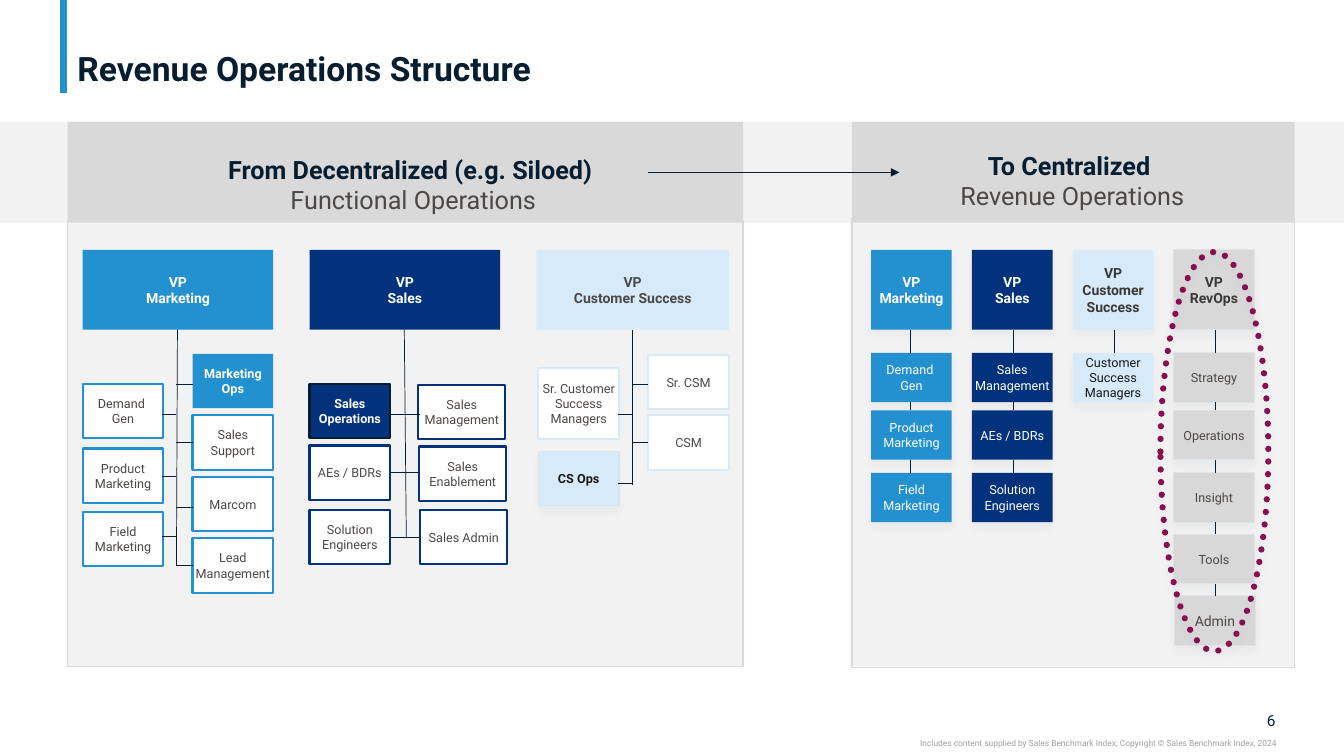
from dataclasses import dataclass, replace
from itertools import pairwise
from typing import Any, Optional, Sequence

from pptx import Presentation
from pptx import util as u
from pptx.dml.color import RGBColor
from pptx.enum import dml, shapes, text
from pptx.oxml import parse_xml
from pptx.oxml.ns import nsdecls, qn

PX = 9144  # EMU in one px, 100 px to the inch
FONT = "Roboto"
NAVY, BLUE, DEEP, PALE = "071E31", "2391CF", "03327C", "D7EAF9"
WHITE, GRAY, BAND, EDGE, SLATE = "FFFFFF", "D8D8D8", "D9D9D9", "E0E3E6", "4C4846"
MID, TOP = text.MSO_ANCHOR.MIDDLE, text.MSO_ANCHOR.TOP
LEFT, MIDST, RIGHT = text.PP_ALIGN.LEFT, text.PP_ALIGN.CENTER, text.PP_ALIGN.RIGHT


@dataclass(frozen=True)
class Look:
    fill: Optional[str] = None
    edge: Optional[str] = None
    width: float = 1.5
    ink: str = SLATE
    bold: bool = False
    size: float = 9
    shade: bool = False


@dataclass(frozen=True)
class Line:
    words: str
    ink: str
    bold: bool = False
    size: float = 9


@dataclass(frozen=True)
class Box:
    x: int
    y: int
    w: int
    h: int
    words: str = ""
    look: Look = Look()


@dataclass(frozen=True)
class Tie:
    x1: int
    y1: int
    x2: int
    y2: int
    ink: str = NAVY
    width: float = 0.5


@dataclass(frozen=True)
class Team:
    """A column of the centralized chart, its head first."""
    x: int
    stem: int
    head: Look
    staff: Look
    words: tuple[str, ...]


def color(code: str) -> RGBColor:
    return RGBColor.from_string(code)


def assign(item: Any, **vals: Any) -> None:
    for key, val in vals.items():
        setattr(item, key, val)


def write(frame: Any, lines: Sequence[Line], align: Any = MIDST,
          anchor: Any = MID, inset: tuple[int, int] = (0, 0), lead: float = 1.0) -> None:
    side, end = (n * PX for n in inset)
    assign(frame, word_wrap=True, vertical_anchor=anchor, margin_left=side,
           margin_right=side, margin_top=end, margin_bottom=end)
    for i, line in enumerate(lines):
        par = frame.add_paragraph() if i else frame.paragraphs[0]
        assign(par, alignment=align, line_spacing=lead)
        run = par.add_run()
        run.text = line.words
        assign(run.font, name=FONT, size=u.Pt(line.size), bold=line.bold)
        run.font.color.rgb = color(line.ink)


def label(tree: Any, box: Box, lines: Sequence[Line], **form: Any) -> None:
    area = tree.add_textbox(*(n * PX for n in (box.x, box.y, box.w, box.h)))
    write(area.text_frame, lines, **form)


def draw(tree: Any, box: Box, kind: Any = shapes.MSO_SHAPE.RECTANGLE) -> Any:
    look = box.look
    item = tree.add_shape(kind, *(n * PX for n in (box.x, box.y, box.w, box.h)))
    item.shadow.inherit = False
    if look.fill:
        item.fill.solid()
        item.fill.fore_color.rgb = color(look.fill)
    else:
        item.fill.background()
    if look.edge:
        item.line.color.rgb = color(look.edge)
        item.line.width = u.Pt(look.width)
    else:
        item.line.fill.background()
    if look.shade:
        item._element.spPr.find(qn("a:effectLst")).append(parse_xml(
            f'<a:outerShdw {nsdecls("a")} blurRad="{u.Pt(6)}" dist="{u.Pt(4)}" '
            f'dir="5400000" algn="t" rotWithShape="0"><a:srgbClr val="{NAVY}">'
            '<a:alpha val="4000"/></a:srgbClr></a:outerShdw>'))
    if box.words:
        write(item.text_frame, [Line(words, look.ink, look.bold, look.size)
                                for words in box.words.split("\n")])
    return item


def link(tree: Any, tie: Tie, arrow: bool = False) -> None:
    item = tree.add_connector(shapes.MSO_CONNECTOR.STRAIGHT,
                              *(n * PX for n in (tie.x1, tie.y1, tie.x2, tie.y2)))
    item.line.color.rgb = color(tie.ink)
    item.line.width = u.Pt(tie.width)
    prop = item._element.spPr
    if arrow:
        prop.find(qn("a:ln")).append(parse_xml(f'<a:tailEnd {nsdecls("a")} type="triangle"/>'))
    prop.append(parse_xml(f'<a:effectLst {nsdecls("a")}/>'))


PANEL, HEAD, FRAME = Look("F2F2F2"), Look(BAND), Look(edge=BAND, width=1)
BACKS = [Box(0, 121, 1333, 100, look=PANEL), Box(844, 121, 439, 540, look=PANEL),
         Box(67, 121, 671, 540, look=PANEL), Box(845, 121, 439, 100, look=HEAD),
         Box(67, 121, 670, 100, look=HEAD)]
FRAMES = [Box(67, 219, 670, 442, look=FRAME), Box(845, 217, 439, 445, look=FRAME)]

MARK, SELL, CARE = (Look(WHITE, edge) for edge in (BLUE, DEEP, PALE))
CHIEF = Look(BLUE, ink=WHITE, bold=True, size=10)
SILOS = [
    Box(82, 248, 189, 79, "VP\nMarketing", CHIEF),
    *(Box(82, y, 80, 54, words, MARK) for y, words in
      ((381, "Demand \nGen"), (445, "Product Marketing"), (508, "Field Marketing"))),
    Box(191, 351, 80, 54, "Marketing Ops", replace(CHIEF, size=9)),
    *(Box(191, y, 80, 54, words, MARK) for y, words in
      ((412, "Sales\nSupport"), (473, "Marcom"), (534, "Lead Management"))),
    Box(307, 248, 189, 79, "VP\nSales", replace(CHIEF, fill=DEEP)),
    Box(307, 381, 80, 54, "Sales Operations", Look(DEEP, NAVY, ink=WHITE, bold=True)),
    *(Box(307, y, 80, 54, words, SELL) for y, words in
      ((442, "AEs / BDRs"), (506, "Solution Engineers"))),
    *(Box(x, y, 86, 54, words, SELL) for x, y, words in
      ((415, 382, "Sales Management"), (416, 443, "Sales Enablement"),
       (417, 506, "Sales Admin"))),
    Box(532, 248, 191, 79, "VP\nCustomer Success", Look(PALE, bold=True, size=10)),
    Box(534, 365, 80, 71, "Sr. Customer Success Managers", CARE),
    Box(534, 448, 80, 54, "CS Ops", Look(PALE, EDGE, 0.75, "161718", True, shade=True)),
    Box(643, 352, 80, 54, "Sr. CSM", CARE),
    Box(643, 412, 80, 54, "CSM", CARE),
]
STEMS = [Tie(176, 327, 175, 561), Tie(401, 327, 403, 534), Tie(627, 327, 627, 481)]
TWIGS = [(161, 175, (411, 473, 532)), (175, 191, (381, 439, 503, 561)),
         (387, 417, (411, 469, 533)), (613, 627, (411, 480)), (627, 643, (381, 439))]

AZURE, ROYAL = (Look(fill, ink=WHITE, shade=True) for fill in (BLUE, DEEP))
SKY = Look(PALE, ink="161718", shade=True)
STEEL = Look(GRAY, EDGE, 0.75, "4C4845", shade=True)
TEAMS = [
    Team(864, 903, replace(AZURE, bold=True, size=10), AZURE,
         ("VP\nMarketing", "Demand \nGen", "Product Marketing", "Field Marketing")),
    Team(964, 1005, replace(ROYAL, bold=True, size=10), ROYAL,
         ("VP\nSales", "Sales Management", "AEs / BDRs", "Solution Engineers")),
    Team(1064, 1105, replace(SKY, ink="3B3838", bold=True, size=10), SKY,
         ("VP\nCustomer Success", "Customer Success Managers")),
    Team(1164, 1205, replace(STEEL, ink="3B3838", bold=True, size=10), STEEL,
         ("VP\nRevOps", "Strategy", "Operations", "Insight", "Tools", "Admin")),
]
ROWS = [(248, 79), (350, 49), (407, 49), (469, 49), (530, 49), (591, 49)]


def staff(tree: Any, team: Team) -> None:
    rows = ROWS[:len(team.words)]
    for i, ((y, h), words) in enumerate(zip(rows, team.words)):
        look = team.staff if i else team.head
        if words == "Admin":
            look = replace(look, size=10)
        draw(tree, Box(team.x + (words == "Admin"), y, 80, h, words, look))
    for (y, h), (low, _) in pairwise(rows):
        link(tree, Tie(team.stem, y + h, team.stem, low))


def main() -> None:
    deck = Presentation()
    assign(deck, slide_width=1333 * PX, slide_height=750 * PX)
    tree = deck.slides.add_slide(deck.slide_layouts[6]).shapes

    link(tree, Tie(63, 0, 63, 92, BLUE, 5))
    label(tree, Box(1232, 705, 33, 19), [Line("6", NAVY, size=11)], align=RIGHT)
    label(tree, Box(750, 732, 516, 10),
          [Line("Includes content supplied by Sales Benchmark Index; "
                "Copyright © Sales Benchmark Index, 2024", "A0A0A0", size=6)],
          align=RIGHT, anchor=TOP)
    for box in BACKS:
        draw(tree, box)
    label(tree, Box(67, 4, 1199, 84), [Line("Revenue Operations Structure", NAVY, True, 24)],
          align=LEFT, anchor=text.MSO_ANCHOR.BOTTOM, inset=(10, 0), lead=0.9)

    for box in SILOS:
        draw(tree, box)
    twigs = [Tie(x1, y, x2, y) for x1, x2, ys in TWIGS for y in ys]
    for tie in STEMS + twigs:
        link(tree, tie)
    for team in TEAMS:
        staff(tree, team)

    for box, first, last in (
            (Box(75, 148, 670, 71), "From Decentralized (e.g. Siloed) ", "Functional Operations"),
            (Box(925, 144, 277, 71), "To Centralized ", "Revenue Operations")):
        label(tree, box, [Line(first, NAVY, True, 18), Line(last, SLATE, size=18)],
              anchor=TOP, inset=(10, 5))
    for box in FRAMES:
        draw(tree, box)
    link(tree, Tie(643, 171, 892, 171), arrow=True)

    ring = draw(tree, Box(1151, 250, 107, 396, look=Look(edge="880E4F", width=4.5, shade=True)),
                shapes.MSO_SHAPE.OVAL)
    ring.line.dash_style = dml.MSO_LINE.ROUND_DOT
    ring._element.spPr.find(qn("a:ln")).set("cap", "rnd")
    deck.save("out.pptx")


if __name__ == "__main__":
    main()
